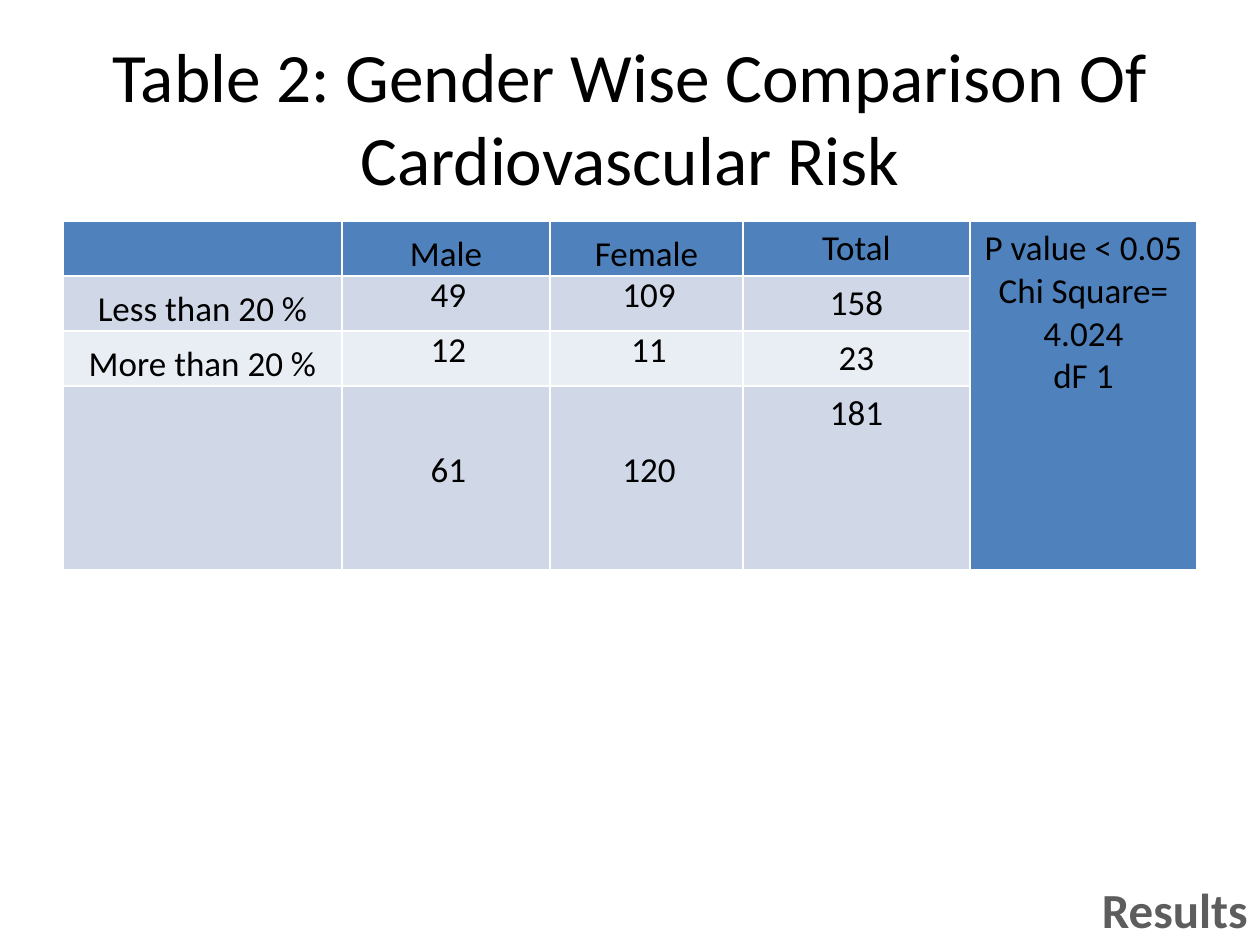
from dataclasses import dataclass

from pptx import Presentation
from pptx.dml.color import RGBColor
from pptx.enum.text import MSO_ANCHOR, MSO_AUTO_SIZE, PP_ALIGN
from pptx.util import Emu, Pt

PX_PER_INCH = 126
FONT = "Calibri"
COLORS = {
    "text": "000000",
    "footer": "5D5D5D",
    "header": "4F81BD",
    "band_dark": "D0D8E8",
    "band_light": "E9EDF4",
}
COL_WIDTHS = [279, 208, 193, 227, 227]
ROW_HEIGHTS = [55, 55, 55, 183]
ROW_FILLS = ["header", "band_dark", "band_light", "band_dark"]
STATISTICS = "P value < 0.05\nChi Square= 4.024\ndF 1"
ROWS = [
    ["", "Male", "Female", "Total", STATISTICS],
    ["Less than 20 %", "49", "109", "158", ""],
    ["More than 20 %", "12", "11", "23", ""],
    ["", "61", "120", "181", ""],
]


@dataclass(frozen=True)
class Label:
    text: str
    left: int
    top: int
    width: int
    height: int
    size: float
    color: str
    align: PP_ALIGN
    anchor: MSO_ANCHOR
    bold: bool = False


@dataclass(frozen=True)
class CellStyle:
    """Anchor, margins in px (left, top, right, bottom) and paragraph settings."""
    anchor: MSO_ANCHOR
    margins: tuple
    indent: int = 0
    line_pt: int = 0


PLAIN = CellStyle(MSO_ANCHOR.TOP, (13, 6, 13, 6))
HEADING = CellStyle(MSO_ANCHOR.BOTTOM, (1, 1, 1, 0))
COUNT = CellStyle(MSO_ANCHOR.MIDDLE, (0, 0, 0, 0), indent=5, line_pt=16)

LABELS = [
    Label("Table 2: Gender Wise Comparison Of Cardiovascular Risk",
          63, 38, 1134, 157, 39.6, "text", PP_ALIGN.CENTER, MSO_ANCHOR.MIDDLE),
    Label("Results", 0, 873, 1260, 72, 28, "footer",
          PP_ALIGN.RIGHT, MSO_ANCHOR.TOP, bold=True),
]


def px(value: int) -> Emu:
    return Emu(round(value * 914400 / PX_PER_INCH))


def rgb(name: str) -> RGBColor:
    return RGBColor.from_string(COLORS[name])


def format_text(tf, size: float, color: str, align: PP_ALIGN, bold: bool) -> None:
    for p in tf.paragraphs:
        p.alignment = align
        for r in p.runs:
            r.font.name = FONT
            r.font.size = Pt(size)
            r.font.bold = bold
            r.font.color.rgb = rgb(color)


def add_label(slide, label: Label) -> None:
    sp = slide.shapes.add_textbox(px(label.left), px(label.top),
                                  px(label.width), px(label.height))
    tf = sp.text_frame
    tf.word_wrap = True
    tf.auto_size = MSO_AUTO_SIZE.NONE
    tf.vertical_anchor = label.anchor
    tf.text = label.text
    format_text(tf, label.size, label.color, label.align, label.bold)


def style_for(row: int, col: int) -> CellStyle:
    if col >= 3 or not ROWS[row][col]:
        return PLAIN
    return HEADING if row == 0 or col == 0 else COUNT


def fill_cell(cell, text: str, fill: str, style: CellStyle) -> None:
    cell.fill.solid()
    cell.fill.fore_color.rgb = rgb(fill)
    cell.vertical_anchor = style.anchor
    (cell.margin_left, cell.margin_top,
     cell.margin_right, cell.margin_bottom) = map(px, style.margins)
    tf = cell.text_frame
    tf.text = text
    format_text(tf, 20, "text", PP_ALIGN.CENTER, False)
    for p in tf.paragraphs:
        if style.line_pt:
            p.line_spacing = Pt(style.line_pt)
        if style.indent:
            pPr = p._p.get_or_add_pPr()
            pPr.set("marL", str(px(style.indent)))
            pPr.set("indent", "0")


def add_risk_table(slide) -> None:
    table = slide.shapes.add_table(
        len(ROWS), len(COL_WIDTHS), px(63), px(221),
        px(sum(COL_WIDTHS)), px(sum(ROW_HEIGHTS))).table
    for column, width in zip(table.columns, COL_WIDTHS):
        column.width = px(width)
    for row, height in zip(table.rows, ROW_HEIGHTS):
        row.height = px(height)
    last = len(COL_WIDTHS) - 1
    table.cell(0, last).merge(table.cell(len(ROWS) - 1, last))
    for i, values in enumerate(ROWS):
        for j, text in enumerate(values):
            fill = "header" if j == last else ROW_FILLS[i]
            fill_cell(table.cell(i, j), text, fill, style_for(i, j))


def main() -> None:
    prs = Presentation()
    prs.slide_width, prs.slide_height = px(1260), px(945)
    s = prs.slides.add_slide(prs.slide_layouts[6])
    title, footer = LABELS
    add_label(s, title)
    add_risk_table(s)
    add_label(s, footer)
    prs.save("out.pptx")


if __name__ == "__main__":
    main()
